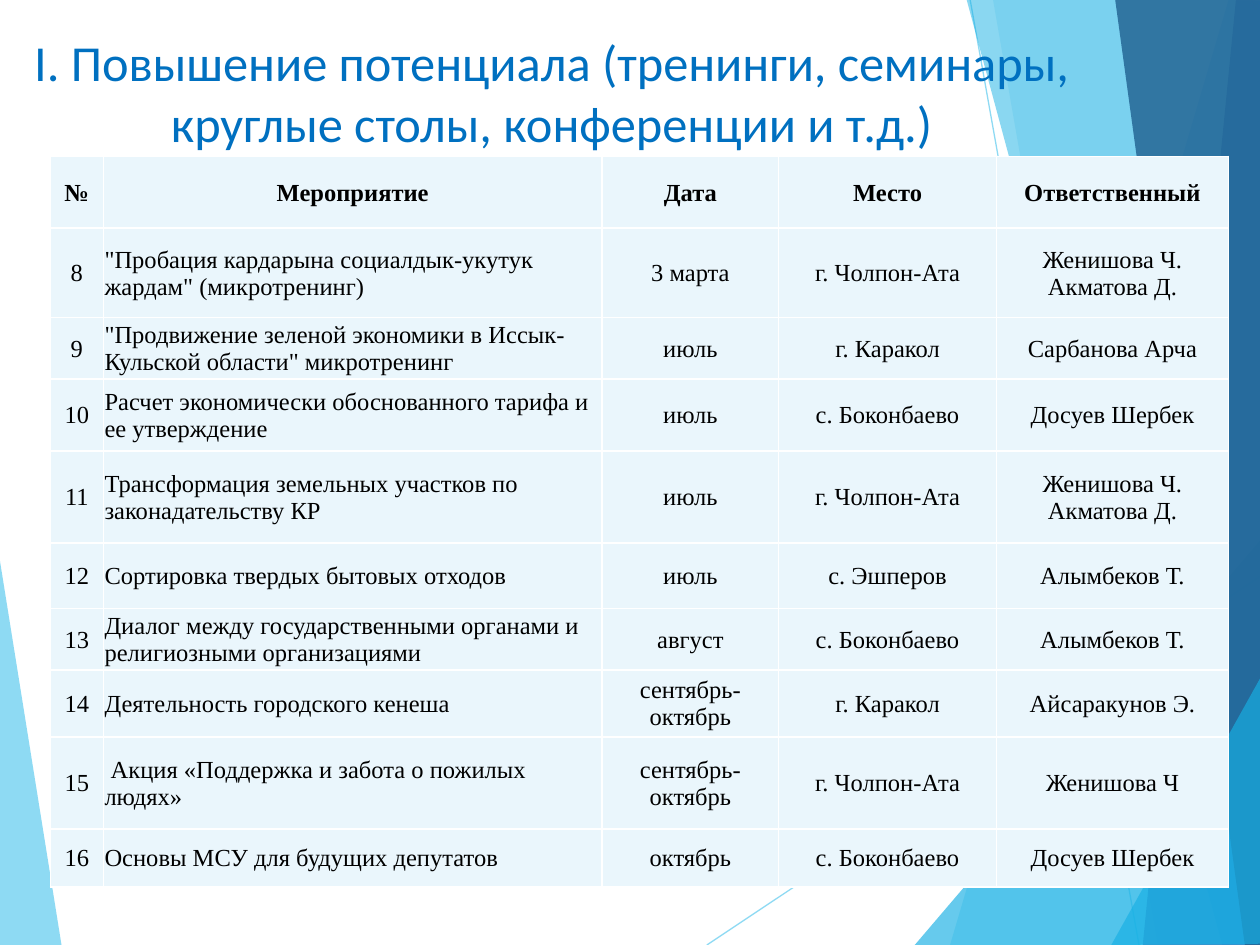
from lxml import etree
from pptx import Presentation
from pptx.dml.color import RGBColor
from pptx.enum.shapes import MSO_CONNECTOR
from pptx.enum.text import MSO_ANCHOR as ANCHOR, PP_ALIGN as ALIGN
from pptx.oxml.ns import qn
from pptx.util import Inches, Pt

WIDTH, HEIGHT = 10, 7.5
SKY, CYAN, BLUE, NAVY = "5FCBEF", "17B0E4", "2E83C3", "226292"
TITLE = ("I. Повышение потенциала (тренинги, семинары, "
         "круглые столы, конференции и т.д.)")

# Facets: colour, opacity in percent, corners in inches
LEFT_FACET = (SKY, 70, [(-0.01, 4.39), (0.49, 7.51), (-0.01, 7.5)])
RIGHT_FACETS = [
    (SKY, 36, [(9.75, 0), (7.54, 7.5), (10.02, 7.51), (10.01, 0.01)]),
    (SKY, 20, [(7.88, -0.01), (9.19, 7.5), (10.01, 7.5), (10.01, -0.01)]),
    (CYAN, 66, [(7.26, 7.5), (10, 4.29), (10.01, 7.5)]),
    (CYAN, 50, [(7.67, -0.01), (9.7, 7.5), (10.01, 7.49), (10.01, -0.01)]),
    (BLUE, 70, [(9.81, -0.01), (9.07, 7.5), (10.01, 7.5), (10, -0.01)]),
    (NAVY, 82, [(8.85, -0.01), (9.88, 7.5), (10.02, 7.5), (10, -0.01)]),
    (CYAN, 66, [(8.82, 7.5), (10.02, 5.35), (10.02, 7.49)]),
]
RAYS = [((5.61, 7.5), (10.01, 4.57)), ((7.7, 0), (9.04, 7.5))]

COLUMNS = [0.42, 3.96, 1.4, 1.73, 1.84]
ROWS = [0.57, 0.71, 0.49, 0.57, 0.73, 0.52, 0.49, 0.53, 0.73, 0.46]
HEADINGS = ("№", "Мероприятие", "Дата", "Место", "Ответственный")
FIRST_NUMBER = 8
EVENTS = [
    ('"Пробация кардарына социалдык-укутук жардам" (микротренинг)',
     "3 марта", "г. Чолпон-Ата", "Женишова Ч. Акматова Д."),
    ('"Продвижение зеленой экономики в Иссык-Кульской области" микротренинг',
     "июль", "г. Каракол", "Сарбанова Арча"),
    ("Расчет экономически обоснованного тарифа и ее утверждение",
     "июль", "с. Боконбаево", "Досуев Шербек"),
    ("Трансформация земельных участков по законадательству КР",
     "июль", "г. Чолпон-Ата", "Женишова Ч. Акматова Д."),
    ("Сортировка твердых бытовых отходов",
     "июль", "с. Эшперов", "Алымбеков Т."),
    ("Диалог между государственными органами и религиозными организациями",
     "август", "с. Боконбаево", "Алымбеков Т."),
    ("Деятельность городского кенеша",
     "сентябрь-октябрь", "г. Каракол", "Айсаракунов Э."),
    (" Акция «Поддержка и забота о пожилых людях»",
     "сентябрь-октябрь", "г. Чолпон-Ата", "Женишова Ч"),
    ("Основы МСУ для будущих депутатов",
     "октябрь", "с. Боконбаево", "Досуев Шербек"),
]


def paint(fill, color, opacity=100):
    """Make a fill solid, in a hex colour and an opacity in percent."""
    fill.solid()
    fill.fore_color.rgb = RGBColor.from_string(color)
    if opacity < 100:
        for tint in fill._xPr.iter(qn("a:srgbClr")):
            etree.SubElement(tint, qn("a:alpha"), val=str(opacity * 1000))


def set_values(target, values):
    for key, value in values.items():
        setattr(target, key, value)


def write(frame, text, align, color, **font):
    paragraph = frame.paragraphs[0]
    paragraph.alignment = align
    run = paragraph.add_run()
    run.text = text
    paint(run.font.fill, color)
    set_values(run.font, font)


def add_facet(slide, color, opacity, corners):
    start, *rest = [(Inches(x), Inches(y)) for x, y in corners]
    builder = slide.shapes.build_freeform(*start, scale=1.0)
    builder.add_line_segments(rest, close=True)
    facet = builder.convert_to_shape()
    facet.shadow.inherit = False
    facet.line.fill.background()
    paint(facet.fill, color, opacity)


def add_ray(slide, start, end):
    points = [Inches(value) for value in start + end]
    ray = slide.shapes.add_connector(MSO_CONNECTOR.STRAIGHT, *points)
    ray.line.width = Pt(0.75)
    paint(ray.line.fill, SKY, 70)
    etree.SubElement(ray._element.spPr, qn("a:effectLst"))


def add_backdrop(slide):
    add_facet(slide, *LEFT_FACET)
    for start, end in RAYS:
        add_ray(slide, start, end)
    for facet in RIGHT_FACETS:
        add_facet(slide, *facet)


def add_title(slide, box):
    frame = slide.shapes.add_textbox(*map(Inches, box)).text_frame
    set_values(frame, {"word_wrap": True, "vertical_anchor": ANCHOR.MIDDLE,
                       "margin_left": Inches(0.08),
                       "margin_right": Inches(0.08)})
    write(frame, TITLE, ALIGN.CENTER, "0070C0", name="Calibri", size=Pt(28.8))


def add_borders(cell, color):
    properties = cell._tc.get_or_add_tcPr()
    for index, side in enumerate(("lnL", "lnR", "lnT", "lnB")):
        border = etree.Element(qn(f"a:{side}"), w=str(Pt(1)))
        solid = etree.SubElement(border, qn("a:solidFill"))
        etree.SubElement(solid, qn("a:srgbClr"), val=color)
        properties.insert(index, border)


def add_schedule(slide, left, top):
    box = [Inches(v) for v in (left, top, sum(COLUMNS), sum(ROWS))]
    table = slide.shapes.add_table(len(ROWS), len(COLUMNS), *box).table
    for column, width in zip(table.columns, COLUMNS):
        column.width = Inches(width)
    for row, height in zip(table.rows, ROWS):
        row.height = Inches(height)

    numbered = [(str(n), *event) for n, event in enumerate(EVENTS, FIRST_NUMBER)]
    margin = Inches(0.01)
    for r, entry in enumerate([HEADINGS, *numbered]):
        for c, text in enumerate(entry):
            cell = table.cell(r, c)
            set_values(cell, {"margin_left": margin, "margin_right": margin,
                              "margin_top": margin, "margin_bottom": 0,
                              "vertical_anchor": ANCHOR.MIDDLE})
            paint(cell.fill, "EAF6FC")
            add_borders(cell, "FFFFFF")
            align = ALIGN.LEFT if r and c == 1 else ALIGN.CENTER
            write(cell.text_frame, text, align, "000000",
                  name="Times New Roman", size=Pt(14), bold=r == 0)


def main():
    deck = Presentation()
    deck.slide_width, deck.slide_height = Inches(WIDTH), Inches(HEIGHT)
    slide = deck.slides.add_slide(deck.slide_layouts[6])
    add_backdrop(slide)
    add_title(slide, (0.17, 0.12, 8.42, 1.22))
    add_schedule(slide, 0.4, 1.24)
    deck.save("out.pptx")


if __name__ == "__main__":
    main()
